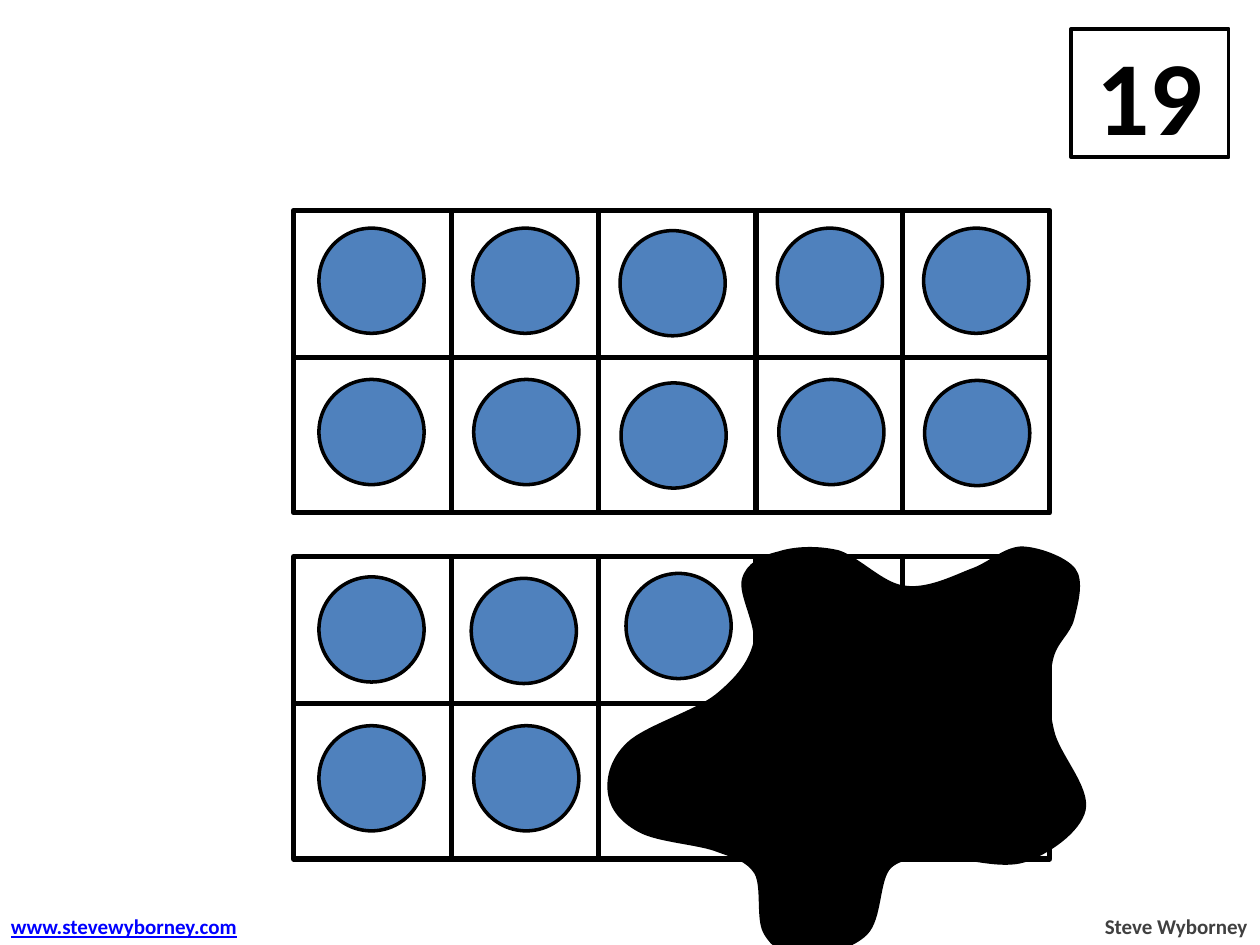
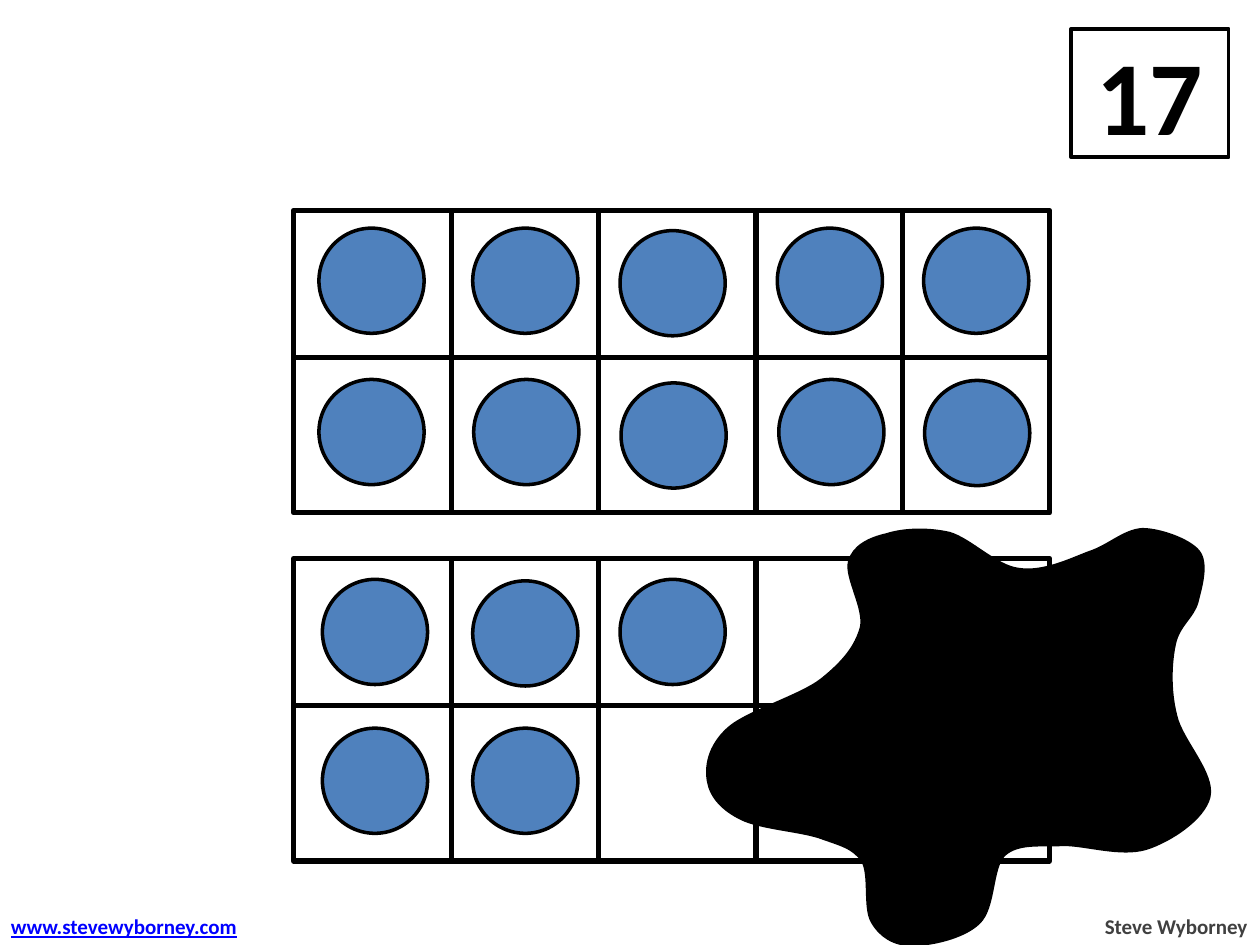
import dataclasses

import pptx
import pptx.dml.color
import pptx.enum.shapes
import pptx.enum.text
import pptx.oxml.ns
import pptx.oxml.xmlchemy
import pptx.util
from lxml import etree

Cm = pptx.util.Cm
Pt = pptx.util.Pt
Shape = pptx.enum.shapes.MSO_SHAPE
Align = pptx.enum.text.PP_ALIGN
qn = pptx.oxml.ns.qn


@dataclasses.dataclass(frozen=True)
class Theme:
    font: str = "Calibri"
    ink: str = "000000"
    paper: str = "FFFFFF"
    counter: str = "4F81BD"
    author: str = "404040"
    address: str = "0000FF"
    number_size: int = 60
    credit_size: int = 12
    outline: int = 2
    grid: int = 3


THEME = Theme()

# Ten frame geometry, in centimetres
FRAME_LEFT, FRAME_WIDTH, FRAME_HEIGHT = 5.92, 15.24, 6.1
COLUMN_LINES = (3.18, 6.14, 9.32, 12.28)
ROW_LINE = 2.96
ROW_LINE_SHIFT = 0.05
COUNTER_SIZE = 2.12

# Full upper frame, the same on every slide
UPPER_TOP = 4.24
UPPER_COUNTERS = (
    (6.43, 4.6), (9.53, 4.6), (12.5, 4.65), (15.67, 4.6), (18.62, 4.6),
    (6.43, 7.65), (9.55, 7.65), (12.52, 7.72), (15.7, 7.65), (18.64, 7.67),
)

# Ink blot: its own box (left, top, width, height), start point and Bezier curves
BLOT_BOX = (4.83, 4.35, 3.77, 3.23)
BLOT_START = (5.09, 6.6)
BLOT_CURVES = (
    (4.95, 6.53, 4.86, 6.43, 4.84, 6.31),
    (4.82, 6.2, 4.84, 6.04, 4.99, 5.9),
    (5.13, 5.77, 5.53, 5.65, 5.69, 5.52),
    (5.86, 5.38, 5.95, 5.26, 5.99, 5.11),
    (6.02, 4.96, 5.87, 4.72, 5.9, 4.6),
    (5.93, 4.48, 6.05, 4.42, 6.18, 4.39),
    (6.3, 4.35, 6.48, 4.34, 6.65, 4.38),
    (6.81, 4.43, 7, 4.64, 7.17, 4.66),
    (7.35, 4.69, 7.55, 4.59, 7.7, 4.53),
    (7.85, 4.48, 7.96, 4.36, 8.1, 4.35),
    (8.23, 4.35, 8.45, 4.43, 8.52, 4.52),
    (8.59, 4.61, 8.54, 4.79, 8.51, 4.91),
    (8.48, 5.03, 8.37, 5.09, 8.34, 5.24),
    (8.31, 5.38, 8.3, 5.6, 8.35, 5.8),
    (8.39, 5.99, 8.64, 6.25, 8.6, 6.43),
    (8.56, 6.6, 8.31, 6.77, 8.13, 6.83),
    (7.94, 6.89, 7.68, 6.8, 7.51, 6.8),
    (7.33, 6.81, 7.17, 6.78, 7.06, 6.88),
    (6.96, 6.98, 6.99, 7.29, 6.87, 7.41),
    (6.75, 7.53, 6.5, 7.58, 6.37, 7.58),
    (6.23, 7.58, 6.13, 7.51, 6.07, 7.4),
    (6.01, 7.29, 6.06, 7.04, 6, 6.93),
    (5.93, 6.82, 5.83, 6.8, 5.67, 6.74),
    (5.52, 6.69, 5.23, 6.67, 5.09, 6.6),
)


@dataclasses.dataclass(frozen=True)
class Puzzle:
    number: str
    lower_top: float
    lower_counters: tuple
    blot_box: tuple


PUZZLES = (
    Puzzle(
        "19", 11.22,
        ((6.43, 11.63), (9.5, 11.66), (12.62, 11.56), (15.7, 11.66),
         (6.43, 14.63), (9.55, 14.63), (12.57, 14.63), (15.65, 14.61), (18.62, 14.68)),
        (12.27, 11.05, 9.58, 8.2),
    ),
    Puzzle(
        "17", 11.26,
        ((6.5, 11.68), (9.53, 11.71), (12.5, 11.68), (18.64, 11.61),
         (6.5, 14.68), (9.53, 14.68), (18.64, 14.73)),
        (14.26, 10.68, 10.11, 8.36),
    ),
)


def rgb(code):
    return pptx.dml.color.RGBColor.from_string(code)


def paint(shape, fill=None, width=THEME.outline):
    """Give a shape its fill (or none) and a plain ink outline."""
    if fill:
        shape.fill.solid()
        shape.fill.fore_color.rgb = rgb(fill)
    else:
        shape.fill.background()
    shape.line.color.rgb = rgb(THEME.ink)
    shape.line.width = Pt(width)


def write(frame, text, size, color, align=Align.LEFT, underline=False):
    paragraph = frame.paragraphs[0]
    paragraph.alignment = align
    run = paragraph.add_run()
    run.text = text
    run.font.name = THEME.font
    run.font.size = Pt(size)
    run.font.bold = True
    run.font.underline = underline
    run.font.color.rgb = rgb(color)


def add_number(slide, number):
    title = slide.shapes.title
    title.left, title.top, title.width, title.height = Cm(21.59), Cm(0.58), Cm(3.18), Cm(2.59)
    paint(title, THEME.paper)
    frame = title.text_frame
    frame.auto_size = pptx.enum.text.MSO_AUTO_SIZE.NONE
    frame.vertical_anchor = pptx.enum.text.MSO_ANCHOR.MIDDLE
    write(frame, number, THEME.number_size, THEME.ink, align=Align.CENTER)


def add_credit(slide, text, left, width, color, **style):
    credit = slide.shapes.add_textbox(Cm(left), Cm(18.29), Cm(width), Cm(0.76))
    credit.text_frame.word_wrap = False
    credit.text_frame.auto_size = pptx.enum.text.MSO_AUTO_SIZE.SHAPE_TO_FIT_TEXT
    write(credit.text_frame, text, THEME.credit_size, color, **style)


def add_counters(shapes, places):
    for left, top in places:
        counter = shapes.add_shape(
            Shape.OVAL, Cm(left), Cm(top), Cm(COUNTER_SIZE), Cm(COUNTER_SIZE))
        counter.shadow.inherit = False
        paint(counter, THEME.counter)


def add_grid_line(shapes, start, end):
    line = shapes.add_connector(
        pptx.enum.shapes.MSO_CONNECTOR.STRAIGHT, *map(Cm, start + end))
    line.line.color.rgb = rgb(THEME.ink)
    line.line.width = Pt(THEME.grid)
    etree.SubElement(line._element.spPr, qn("a:effectLst"))


def add_ten_frame(slide, top, counters=()):
    """Group a border, its dividing lines and any counters inside it."""
    shapes = slide.shapes.add_group_shape().shapes
    add_counters(shapes, counters)
    border = shapes.add_shape(
        Shape.RECTANGLE, Cm(FRAME_LEFT), Cm(top), Cm(FRAME_WIDTH), Cm(FRAME_HEIGHT))
    border.shadow.inherit = False
    paint(border, width=THEME.grid)
    for offset in COLUMN_LINES:
        x = FRAME_LEFT + offset
        add_grid_line(shapes, (x, top), (x, top + FRAME_HEIGHT))
    left, y = FRAME_LEFT + ROW_LINE_SHIFT, top + ROW_LINE
    add_grid_line(shapes, (left, y), (left + FRAME_WIDTH, y))


def add_ink_blot(slide, box):
    """Scale the blot outline into the box and turn its segments into curves."""
    left, top, width, height = box
    own_left, own_top, own_width, own_height = BLOT_BOX

    def place(x, y):
        return (Cm(left + (x - own_left) * width / own_width),
                Cm(top + (y - own_top) * height / own_height))

    points = [place(*curve[i:i + 2]) for curve in BLOT_CURVES for i in (0, 2, 4)]
    builder = slide.shapes.build_freeform(*place(*BLOT_START))
    builder.add_line_segments(points, close=True)
    blot = builder.convert_to_shape()
    blot.shadow.inherit = False
    paint(blot, THEME.ink)

    segments = list(blot._element.iter(qn("a:lnTo")))
    for first, second, third in zip(segments[::3], segments[1::3], segments[2::3]):
        curve = etree.Element(qn("a:cubicBezTo"))
        first.addprevious(curve)
        for segment in (first, second, third):
            curve.append(segment[0])
            segment.getparent().remove(segment)


def add_puzzle(deck, puzzle):
    slide = deck.slides.add_slide(deck.slide_layouts.get_by_name("Title Only"))
    add_number(slide, puzzle.number)
    # Counters lie beneath the blot
    add_counters(slide.shapes, puzzle.lower_counters)
    add_ink_blot(slide, puzzle.blot_box)
    # Frames
    add_ten_frame(slide, puzzle.lower_top)
    add_ten_frame(slide, UPPER_TOP, UPPER_COUNTERS)
    # Footer
    add_credit(slide, "www.stevewyborney.com", -0.03, 5.06, THEME.address, underline=True)
    add_credit(slide, "Steve Wyborney", 22, 3.4, THEME.author, align=Align.RIGHT)


def main():
    deck = pptx.Presentation()
    deck.slide_width, deck.slide_height = Cm(25.4), Cm(19.05)
    for puzzle in PUZZLES:
        add_puzzle(deck, puzzle)
    deck.save("out.pptx")


if __name__ == "__main__":
    main()
